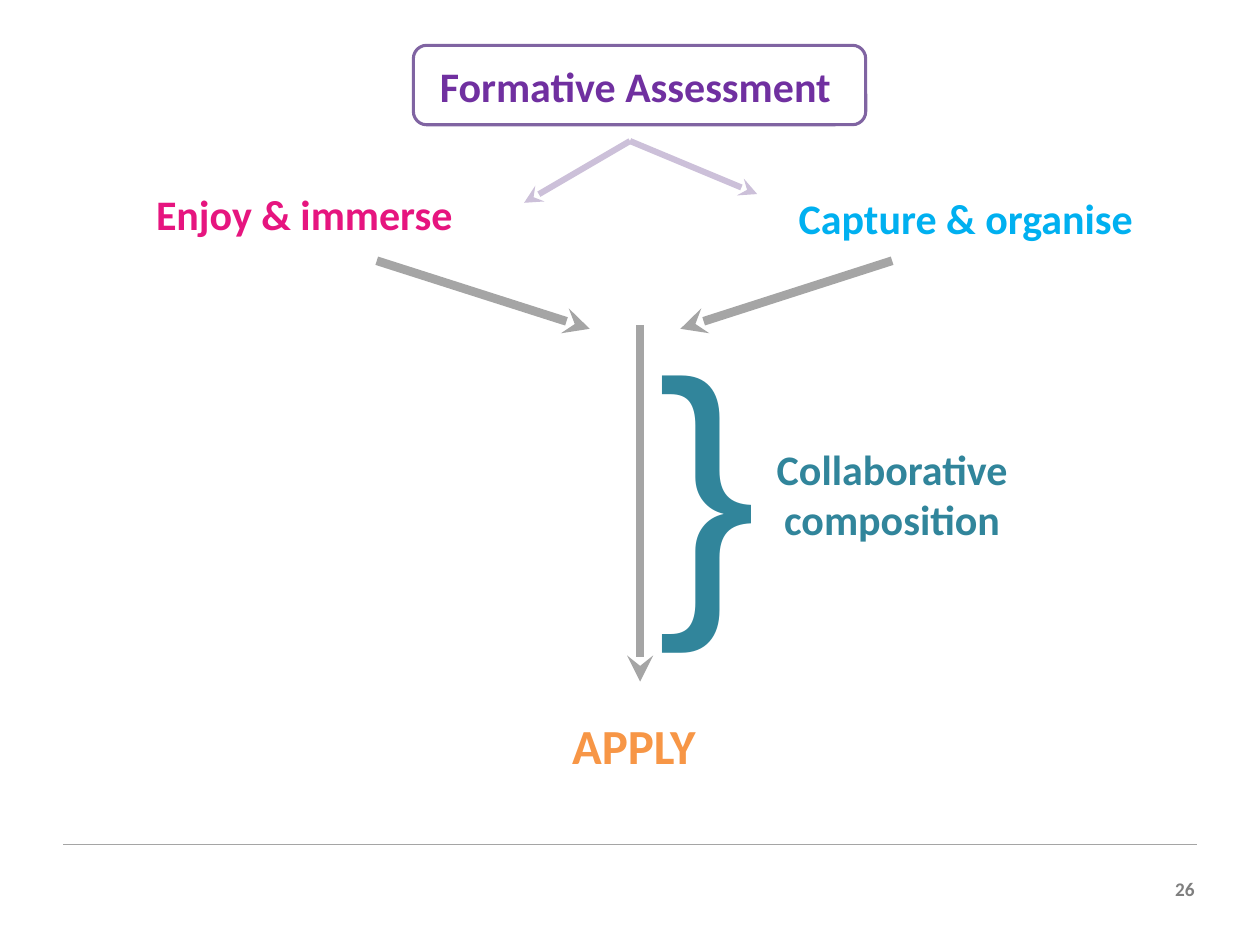
from lxml import etree
from pptx import Presentation
from pptx.dml.color import RGBColor
from pptx.enum.shapes import MSO_CONNECTOR, MSO_SHAPE
from pptx.enum.text import PP_ALIGN
from pptx.oxml.ns import qn
from pptx.util import Pt

LEFT, MID, RIGHT = PP_ALIGN.LEFT, PP_ALIGN.CENTER, PP_ALIGN.RIGHT
STRAIGHT = MSO_CONNECTOR.STRAIGHT
ROUND = MSO_SHAPE.ROUNDED_RECTANGLE

HEX = {
    "white": "FFFFFF", "grey": "A5A5A5", "number": "7F7F7F",
    "pink": "E6157F", "blue": "00B0F0", "orange": "F79646",
    "purple": "7030A0", "frame": "8064A2", "lilac": "CCC0D9",
    "teal": "31859B",
}
RGB = {name: RGBColor.from_string(code) for name, code in HEX.items()}

deck = Presentation()
deck.slide_width, deck.slide_height = Pt(720), Pt(540)
slide = deck.slides.add_slide(deck.slide_layouts[6])
shapes = slide.shapes


def add_line(start, end, color, width, arrow=True):
    line = shapes.add_connector(STRAIGHT, *map(Pt, start + end))
    line.line.color.rgb = RGB[color]
    line.line.width = Pt(width)
    if arrow:
        tail = etree.SubElement(line.line._get_or_add_ln(), qn("a:tailEnd"))
        tail.set("type", "stealth")
    etree.SubElement(line._element.spPr, qn("a:effectLst"))


def add_text(text, place, size, color, align=LEFT, font="Calibri", bold=True):
    box = shapes.add_textbox(*map(Pt, place))
    frame = box.text_frame
    frame.word_wrap = True
    frame.text = text
    para = frame.paragraphs[0]
    para.alignment = align
    run = para.runs[0]
    run.font.name, run.font.size, run.font.bold = font, Pt(size), bold
    run.font.color.rgb = RGB[color]


# Footer rule and slide number
add_line((36, 482.4), (684, 482.4), "grey", 0.75, arrow=False)
add_text("26", (662.4, 497.5, 27.4, 20.9), 11, "number", RIGHT)

# Title frame
frame = shapes.add_shape(ROUND, Pt(236.2), Pt(25.9), Pt(258.5), Pt(45.4))
frame.shadow.inherit = False
frame.fill.solid()
frame.fill.fore_color.rgb = RGB["white"]
frame.line.color.rgb = RGB["frame"]
frame.line.width = Pt(1.75)

# Arrows from the title to the two phases
for end in ((432.7, 110.9), (299.5, 115.9)):
    add_line((360, 80.6), end, "lilac", 3.5)

# Arrows from the phases down to the outcome
for start, end in (
    ((365.8, 185.8), (365.8, 389.5)),
    ((509.8, 149), (388.8, 187.9)),
    ((215.3, 149), (337, 187.9)),
):
    add_line(start, end, "grey", 5)

# Labels
add_text("Formative Assessment ", (92.9, 31, 545.8, 36.7), 24, "purple", MID)
add_text("Enjoy & immerse", (82.1, 104.4, 233.3, 36), 24, "pink")
add_text("Capture & organise", (449.3, 106.6, 258.5, 36), 24, "blue")
add_text("}", (368.6, 164.2, 33.8, 213.1), 170, "teal", font="Arial", bold=False)
add_text("Collaborative composition", (416.2, 249.8, 187.2, 65.5), 24, "teal", MID)
add_text("APPLY ", (198.7, 405.4, 333.4, 41), 28, "orange", MID)

deck.save("out.pptx")
